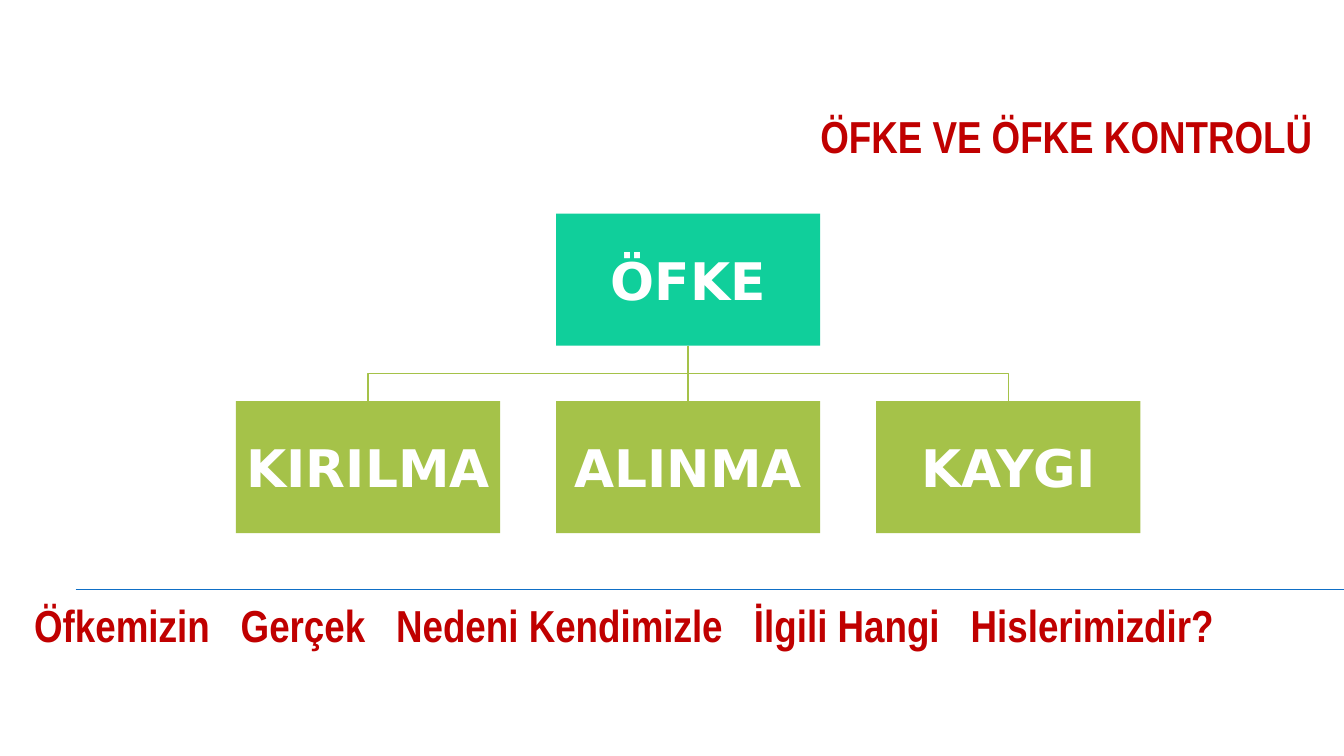
from lxml.etree import SubElement
from pptx import Presentation
from pptx.dml.color import RGBColor
from pptx.enum.shapes import MSO_CONNECTOR, MSO_SHAPE
from pptx.enum.text import MSO_ANCHOR, PP_ALIGN
from pptx.oxml.ns import qn
from pptx.util import Inches, Pt

COLORS = {
    "heading": "C00000",
    "rule": "0F6FC6",
    "anger": "10CF9B",
    "feeling": "A5C249",
    "label": "FFFFFF",
}
SLIDE_WIDTH, SLIDE_HEIGHT = 13.33, 7.5
NODE_WIDTH, NODE_HEIGHT = 2.62, 1.31
WIDE_GAP = 1460  # extra width after a space, in hundredths of a point


def color(name):
    return RGBColor.from_string(COLORS[name])


def style_run(run, font_name, size, color_name):
    run.font.name = font_name
    run.font.size = Pt(size)
    run.font.bold = True
    run.font.color.rgb = color(color_name)


def add_heading(slide, left, top, width, height, phrases, align):
    """Write the phrases on one line, with a widened space between them."""
    heading = slide.shapes.add_textbox(
        Inches(left), Inches(top), Inches(width), Inches(height))
    frame = heading.text_frame
    frame.word_wrap = True
    frame.vertical_anchor = MSO_ANCHOR.MIDDLE
    line = frame.paragraphs[0]
    line.alignment = align
    for position, phrase in enumerate(phrases):
        if position:
            gap = line.add_run()
            gap.text = " "
            style_run(gap, "Arial Narrow", 32, "heading")
            gap.font._element.set("spc", str(WIDE_GAP))
        words = line.add_run()
        words.text = phrase
        style_run(words, "Arial Narrow", 32, "heading")


def add_line(slide, x1, y1, x2, y2, color_name, weight):
    line = slide.shapes.add_connector(
        MSO_CONNECTOR.STRAIGHT, Inches(x1), Inches(y1), Inches(x2), Inches(y2))
    line.line.color.rgb = color(color_name)
    line.line.width = Pt(weight)
    SubElement(line._element.spPr, qn("a:effectLst"))


def add_branch(slide, x1, y1, x2, y2):
    """Join a parent's bottom to a child's top, bending halfway down."""
    if x1 == x2:
        add_line(slide, x1, y1, x2, y2, "feeling", 1)
        return
    middle = (y1 + y2) / 2
    builder = slide.shapes.build_freeform(Inches(x1), Inches(y1))
    bends = [(x1, middle), (x2, middle), (x2, y2)]
    builder.add_line_segments(
        [(Inches(x), Inches(y)) for x, y in bends], close=False)
    branch = builder.convert_to_shape()
    branch.fill.background()
    branch.line.color.rgb = color("feeling")
    branch.line.width = Pt(1)
    branch.shadow.inherit = False


def add_node(slide, center, top, label, color_name):
    node = slide.shapes.add_shape(
        MSO_SHAPE.RECTANGLE, Inches(center - NODE_WIDTH / 2), Inches(top),
        Inches(NODE_WIDTH), Inches(NODE_HEIGHT))
    node.fill.solid()
    node.fill.fore_color.rgb = color(color_name)
    node.line.fill.background()
    node.shadow.inherit = False
    frame = node.text_frame
    frame.margin_left = frame.margin_right = Inches(0.03)
    frame.margin_top = frame.margin_bottom = Inches(0.03)
    frame.vertical_anchor = MSO_ANCHOR.MIDDLE
    frame.text = label
    frame.paragraphs[0].alignment = PP_ALIGN.CENTER
    style_run(frame.paragraphs[0].runs[0], "DejaVu Sans", 37, color_name="label")


def add_tree(slide, left, top, width, height, root, children):
    """Center the root above its children, which span the width evenly."""
    root_center = left + width / 2
    child_top = top + height - NODE_HEIGHT
    step = (width - NODE_WIDTH) / (len(children) - 1)
    middle_child = (len(children) - 1) / 2
    centers = [root_center + (i - middle_child) * step
               for i in range(len(children))]
    for center in centers:
        add_branch(slide, root_center, top + NODE_HEIGHT, center, child_top)
    add_node(slide, root_center, top, root, "anger")
    for center, child in zip(centers, children):
        add_node(slide, center, child_top, child, "feeling")


def main():
    presentation = Presentation()
    presentation.slide_width = Inches(SLIDE_WIDTH)
    presentation.slide_height = Inches(SLIDE_HEIGHT)
    slide = presentation.slides.add_slide(presentation.slide_layouts[6])

    add_line(slide, 0.75, 5.85, SLIDE_WIDTH, 5.85, "rule", 0.75)
    add_heading(slide, 0.3, 1.01, 12.82, 0.67,
                ["ÖFKE VE ÖFKE KONTROLÜ"], PP_ALIGN.RIGHT)
    add_heading(slide, 0.24, 5.86, 12.82, 0.67,
                ["Öfkemizin", "Gerçek", "Nedeni Kendimizle",
                 "İlgili Hangi", "Hislerimizdir?"], PP_ALIGN.LEFT)
    add_tree(slide, 2.34, 2.12, 8.97, 3.17,
             "ÖFKE", ["KIRILMA", "ALINMA", "KAYGI"])
    presentation.save("out.pptx")


if __name__ == "__main__":
    main()
